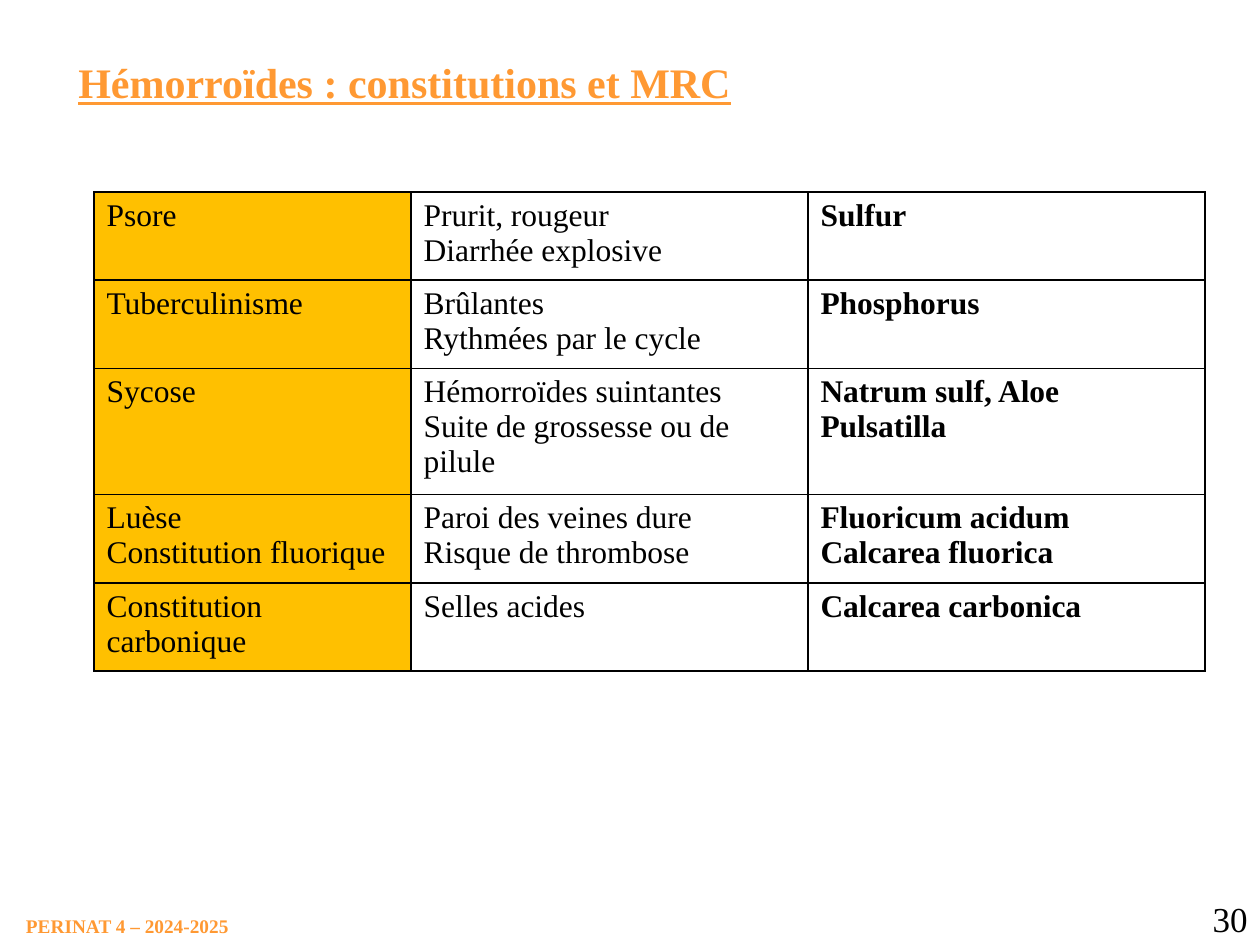
from pptx import Presentation
from pptx import util as u
from pptx.dml.color import RGBColor
from pptx.enum import text
from pptx.oxml import parse_xml
from pptx.oxml.ns import nsdecls

PX = 914400 // 126
FONT = "Times New Roman"
ORANGE, AMBER, BLACK = "FF9933", "FFC000", "000000"

COLUMN_WIDTHS = (317, 397, 397)
ROW_HEIGHTS = (88, 88, 126, 88, 88)
REMEDIES = (
    ("Psore", "Prurit, rougeur\nDiarrhée explosive", "Sulfur"),
    ("Tuberculinisme", "Brûlantes\nRythmées par le cycle", "Phosphorus"),
    ("Sycose", "Hémorroïdes suintantes\nSuite de grossesse ou de pilule",
     "Natrum sulf, Aloe\nPulsatilla"),
    ("Luèse\nConstitution fluorique", "Paroi des veines dure\nRisque de thrombose",
     "Fluoricum acidum\nCalcarea fluorica"),
    ("Constitution carbonique", "Selles acides", "Calcarea carbonica"),
)


def px(*lengths):
    return [u.Emu(length * PX) for length in lengths]


def color(hex_value):
    return RGBColor.from_string(hex_value)


def write(frame, content, size, hex_value, bold=False, underline=False, align=None):
    """Fill a text frame, one paragraph per line of content."""
    frame.text = content
    for paragraph in frame.paragraphs:
        paragraph.alignment = align
        font = paragraph.font
        font.name, font.size = FONT, u.Pt(size)
        font.bold, font.underline = bold, underline
        font.color.rgb = color(hex_value)


def add_label(slide, box, content, size, hex_value, **style):
    frame = slide.shapes.add_textbox(*px(*box)).text_frame
    frame.word_wrap = True
    write(frame, content, size, hex_value, **style)
    return frame


def add_title(slide, box):
    frame = add_label(slide, box, "Hémorroïdes : constitutions et MRC", 24, ORANGE,
                      bold=True, underline=True)
    frame.vertical_anchor = text.MSO_ANCHOR.MIDDLE


def add_footer(slide, left, top, right):
    course = add_label(slide, (left, top + 23, 207, 24), "PERINAT 4 – 2024-2025",
                       11, ORANGE, bold=True)
    course.word_wrap = False
    course.margin_left = course.margin_right = 0
    course.margin_top = course.margin_bottom = 0
    add_label(slide, (right - 105, top, 105, 54), "30", 20, BLACK,
              align=text.PP_ALIGN.RIGHT)


def add_borders(cell):
    properties = cell._tc.get_or_add_tcPr()
    for position, side in enumerate(("lnL", "lnR", "lnT", "lnB")):
        properties.insert(position, parse_xml(
            f'<a:{side} {nsdecls("a")} w="12700"><a:solidFill>'
            f'<a:srgbClr val="{BLACK}"/></a:solidFill></a:{side}>'))


def add_remedy_table(slide, left, top):
    box = px(left, top, sum(COLUMN_WIDTHS), sum(ROW_HEIGHTS))
    table = slide.shapes.add_table(len(REMEDIES), len(COLUMN_WIDTHS), *box).table
    table.first_row = table.horz_banding = False
    for column, width in zip(table.columns, px(*COLUMN_WIDTHS)):
        column.width = width
    for row, height, entries in zip(table.rows, px(*ROW_HEIGHTS), REMEDIES):
        row.height = height
        for index, (cell, entry) in enumerate(zip(row.cells, entries)):
            write(cell.text_frame, entry, 18, BLACK, bold=index == 2)
            if index == 0:
                cell.fill.solid()
                cell.fill.fore_color.rgb = color(AMBER)
            else:
                cell.fill.background()
            add_borders(cell)


def main():
    deck = Presentation()
    deck.slide_width, deck.slide_height = px(1260, 945)
    slide = deck.slides.add_slide(deck.slide_layouts[6])
    add_footer(slide, 26, 891, 1260)
    add_title(slide, (66, 39, 1086, 86))
    add_remedy_table(slide, 94, 192)
    deck.save("out.pptx")


if __name__ == "__main__":
    main()
